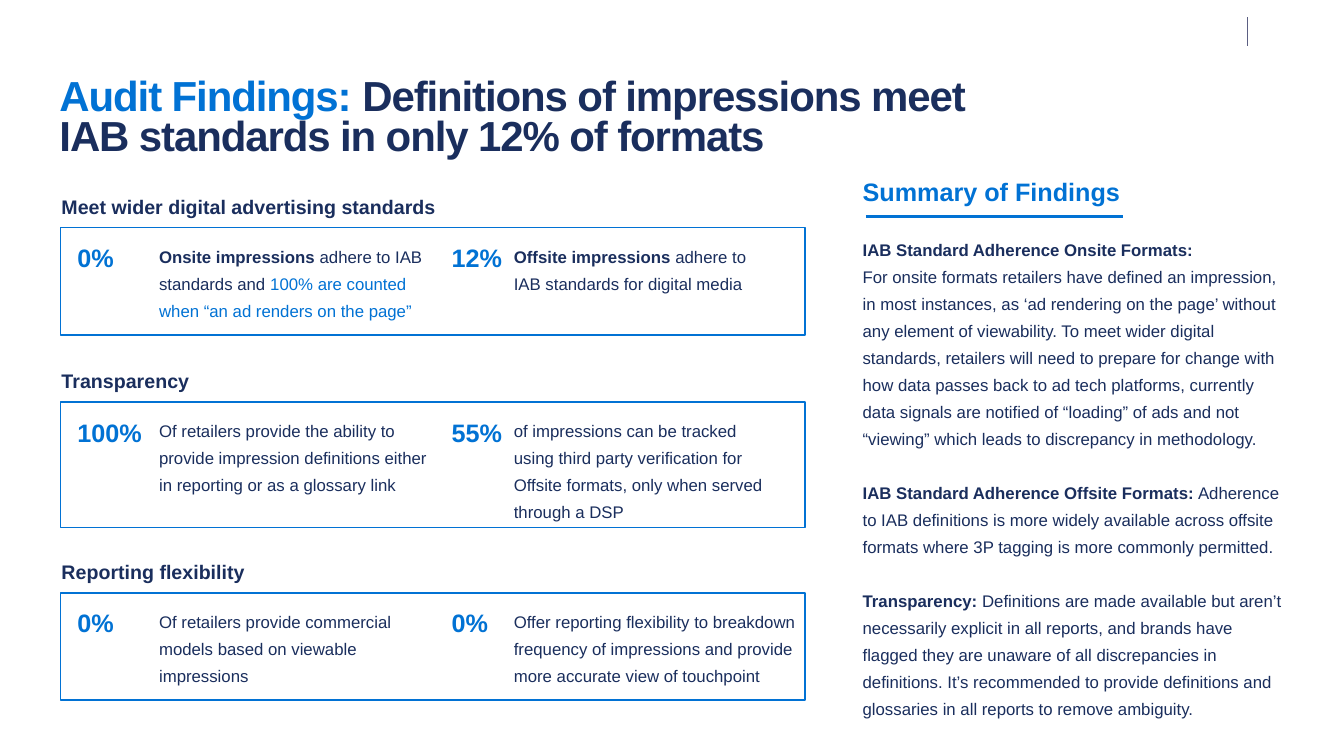
from lxml import etree
from pptx import Presentation
from pptx.dml.color import RGBColor
from pptx.enum import shapes, text
from pptx.oxml.ns import qn
from pptx.util import Cm, Pt

COLORS = {"blue": "0172D4", "navy": "1A2E5D", "gray": "5B5F82", "white": "FFFFFF"}
LINE_PITCH = Pt(19.3)

# A run is (text, color, bold)
TITLE = [("Audit Findings: ", "blue", True),
         ("Definitions of impressions meet IAB standards in only 12% of formats", "navy", True)]

# Each panel: heading, top (cm), height (cm), findings as (figure, text width in cm, runs)
PANELS = [
    ("Meet wider digital advertising standards", 5.74, 2.7, [
        ("0%", 7.4, [("Onsite impressions ", "navy", True),
                     ("adhere to IAB standards and ", "navy", False),
                     ("100% are counted when “an ad renders on the page”", "blue", False)]),
        ("12%", 7.11, [("Offsite impressions ", "navy", True),
                       ("adhere to IAB standards for digital media", "navy", False)]),
    ]),
    ("Transparency", 10.13, 3.16, [
        ("100%", 7.4, [("Of retailers provide the ability to provide impression definitions "
                        "either in reporting or as a glossary link", "navy", False)]),
        ("55%", 7.11, [("of impressions can be tracked using third party verification for\n"
                        "Offsite formats, only when served through a DSP", "navy", False)]),
    ]),
    ("Reporting flexibility", 14.94, 2.7, [
        ("0%", 7.4, [("Of retailers provide commercial models based on viewable impressions",
                      "navy", False)]),
        ("0%", 7.7, [("Offer reporting flexibility to breakdown frequency of impressions and "
                      "provide more accurate view of touchpoint", "navy", False)]),
    ]),
]

SUMMARY_HEADING = "Summary of Findings"
SUMMARY = [
    [("IAB Standard Adherence Onsite Formats:\n", "navy", True),
     ("For onsite formats retailers have defined an impression, in most instances, as "
      "‘ad rendering on the page’ without any element of viewability. To meet wider digital "
      "standards, retailers will need to prepare for change with how data passes back to ad "
      "tech platforms, currently data signals are notified of “loading” of ads and not "
      "“viewing” which leads to discrepancy in methodology.", "navy", False)],
    [("IAB Standard Adherence Offsite Formats:", "navy", True),
     (" Adherence to IAB definitions is more widely available across offsite formats where "
      "3P tagging is more commonly permitted.", "navy", False)],
    [("Transparency: ", "navy", True),
     ("Definitions are made available but aren’t necessarily explicit in all reports, and "
      "brands have flagged they are unaware of all discrepancies in definitions. It’s "
      "recommended to provide definitions and glossaries in all reports to remove ambiguity.",
      "navy", False)],
]

PANEL_LEFT, PANEL_WIDTH = 1.52, 18.77
HEADING_LEFT, HEADING_RISE = 1.3, 1.17
FIGURE_LEFTS, FIGURE_DROP = (1.7, 11.13), 0.33
FINDING_LEFTS, FINDING_DROP = (3.76, 12.7), 0.17
SUMMARY_LEFT = 21.49


def color(name):
    return RGBColor.from_string(COLORS[name])


def add_text(box, paragraphs, size, spacing=None, tracking=None):
    """Write lists of runs; a newline inside a run becomes a line break."""
    frame = box.text_frame
    frame.word_wrap = True
    for index, runs in enumerate(paragraphs):
        paragraph = frame.add_paragraph() if index else frame.paragraphs[0]
        paragraph.alignment = text.PP_ALIGN.LEFT
        if spacing:
            paragraph.line_spacing = spacing
        if index:
            paragraph.space_before = LINE_PITCH
        for words, hue, bold in runs:
            for number, line in enumerate(words.split("\n")):
                if number:
                    paragraph.add_line_break()
                if not line:
                    continue
                run = paragraph.add_run()
                run.text = line
                run.font.name, run.font.size, run.font.bold = "Arial", Pt(size), bold
                run.font.color.rgb = color(hue)
                if tracking:
                    run.font._element.set("spc", str(tracking))
    return frame


def add_box(slide, left, top, width, height):
    return slide.shapes.add_textbox(Cm(left), Cm(top), Cm(width), Cm(height))


def add_rectangle(slide, left, top, width, height):
    rectangle = slide.shapes.add_shape(shapes.MSO_SHAPE.RECTANGLE,
                                       Cm(left), Cm(top), Cm(width), Cm(height))
    rectangle.shadow.inherit = False
    return rectangle


def add_rule(slide, x1, y1, x2, y2, hue, weight):
    rule = slide.shapes.add_connector(shapes.MSO_CONNECTOR.STRAIGHT,
                                      Cm(x1), Cm(y1), Cm(x2), Cm(y2))
    rule.line.color.rgb = color(hue)
    rule.line.width = Pt(weight)
    etree.SubElement(rule._element.spPr, qn("a:effectLst"))


def add_panel(slide, heading, top, height, findings):
    frame = add_rectangle(slide, PANEL_LEFT, top, PANEL_WIDTH, height)
    frame.fill.background()
    frame.line.color.rgb = color("blue")
    frame.line.width = Pt(1)
    heading_box = add_box(slide, HEADING_LEFT, top - HEADING_RISE, 14.33, 1.27)
    add_text(heading_box, [[(heading, "navy", True)]], 14).vertical_anchor = text.MSO_ANCHOR.MIDDLE
    for (figure, width, runs), figure_left, finding_left in zip(
            findings, FIGURE_LEFTS, FINDING_LEFTS):
        add_text(add_box(slide, finding_left, top + FINDING_DROP, width, 2.2),
                 [runs], 12, LINE_PITCH)
        add_text(add_box(slide, figure_left, top + FIGURE_DROP, 2.2, 0.94),
                 [[(figure, "blue", True)]], 18, LINE_PITCH)


def main():
    deck = Presentation()
    deck.slide_width, deck.slide_height = Cm(33.87), Cm(19.05)
    slide = deck.slides.add_slide(deck.slide_layouts[6])

    add_rule(slide, 31.44, 0.43, 31.44, 1.15, "gray", 0.5)
    title = add_text(add_box(slide, 0, 0, 24.59, 3.68), [TITLE], 30, 0.8, -80)
    title.margin_left, title.margin_top = Cm(1.5), Cm(2)

    summary_heading = add_rectangle(slide, SUMMARY_LEFT, 4.19, 7.04, 1.27)
    summary_heading.fill.solid()
    summary_heading.fill.fore_color.rgb = color("white")
    summary_heading.line.fill.background()
    add_text(summary_heading, [[(SUMMARY_HEADING, "blue", True)]], 18)
    add_rule(slide, 21.82, 5.46, 28.3, 5.46, "blue", 2.25)
    add_text(add_box(slide, SUMMARY_LEFT, 5.74, 11.1, 12.37), SUMMARY, 12, LINE_PITCH)

    for panel in PANELS:
        add_panel(slide, *panel)
    deck.save("out.pptx")


if __name__ == "__main__":
    main()
